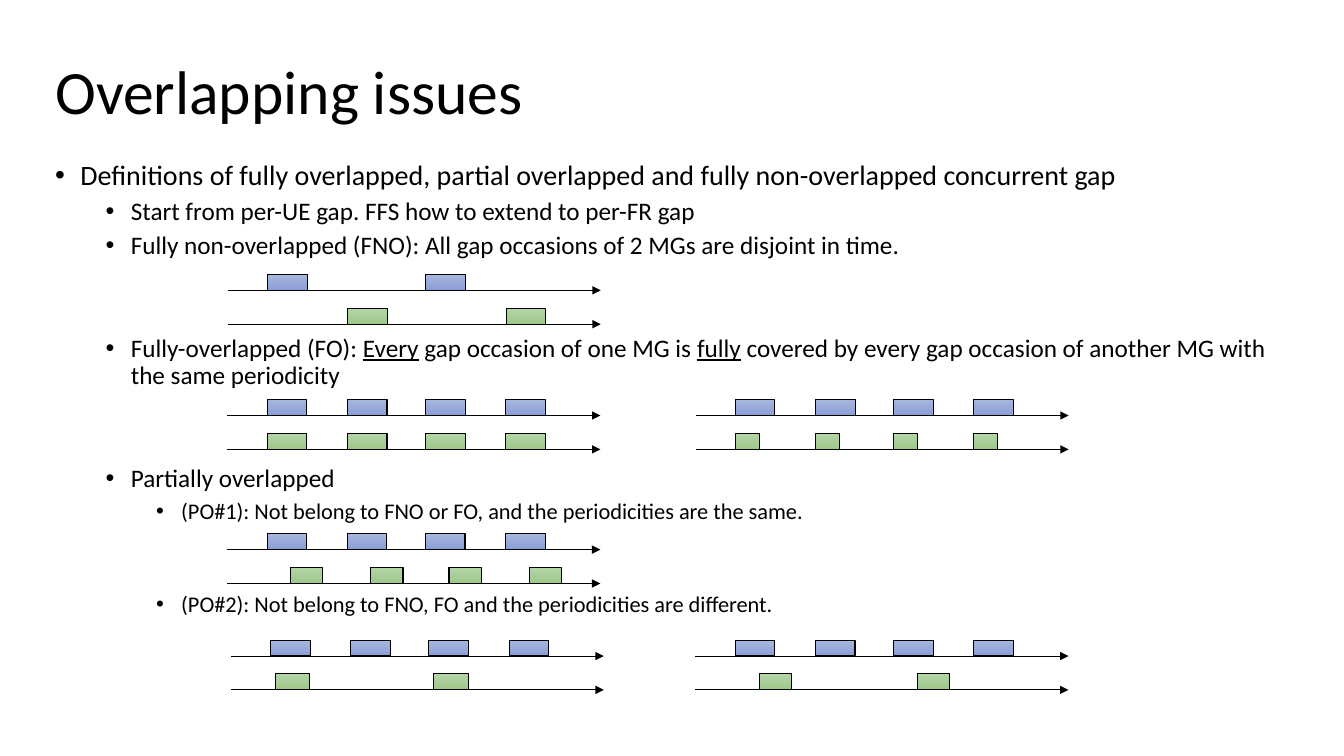
from copy import deepcopy
from dataclasses import dataclass

from lxml.etree import SubElement
from pptx import Presentation
from pptx.dml.color import RGBColor
from pptx.enum.shapes import MSO_CONNECTOR, MSO_SHAPE
from pptx.enum.text import MSO_ANCHOR
from pptx.oxml.ns import qn
from pptx.shapes.group import GroupShape
from pptx.slide import Slide
from pptx.text.text import TextFrame
from pptx.util import Pt


@dataclass(frozen=True)
class Theme:
    font: str = "Calibri"
    ink: str = "000000"
    blue: tuple[str, ...] = ("A8B7DF", "9AABD9", "889ED7")
    green: tuple[str, ...] = ("B5D5A7", "AACE9A", "9CC987")
    title: float = 44
    sizes: tuple[float, ...] = (20, 18, 16)
    line: float = 0.75


@dataclass(frozen=True)
class Point:
    """A bullet; every second one of its texts is underlined."""
    level: int
    before: float
    texts: tuple[str, ...]


@dataclass(frozen=True)
class Gaps:
    """Gap boxes on one time axis: the slots they use, their shift and width."""
    slots: tuple[int, ...]
    shift: float
    width: float


THEME = Theme()
ALL = (0, 1, 2, 3)
BOX_W, BOX_H = 28.3, 11.4
AXIS_W, AXIS_GAP = 266.5, 24.2
SLOTS = (28.5, 85.8, 141.6, 198.9)
FULL = Gaps(ALL, 0, BOX_W)


@dataclass(frozen=True)
class Chart:
    """A blue axis at (left, top) with a green axis below it."""
    left: float
    top: float
    green: Gaps
    blue: Gaps = FULL


POINTS = (
    Point(0, 10, ("Definitions of fully overlapped, partial overlapped and "
                  "fully non-overlapped concurrent gap",)),
    Point(1, 5, ("Start from per-UE gap. FFS how to extend to per-FR gap",)),
    Point(1, 5, ("Fully non-overlapped (FNO): All gap occasions of 2 MGs "
                 "are disjoint in time.",)),
    Point(1, 54, ("Fully-overlapped (FO): ", "Every",
                  " gap occasion of one MG is ", "fully",
                  " covered by every gap occasion of another MG with "
                  "the same periodicity")),
    Point(1, 54, ("Partially overlapped",)),
    Point(2, 5, ("(PO#1): Not belong to FNO or FO, and the periodicities "
                 "are the same.",)),
    Point(2, 49.5, ("(PO#2): Not belong to FNO, FO and the periodicities "
                    "are different.",)),
)

CHARTS = (
    Chart(162.6, 207.4, Gaps((1, 3), 0, BOX_W), Gaps((0, 2), 0, BOX_W)),
    Chart(496.8, 296.8, Gaps(ALL, 0, 17)),
    Chart(162.4, 296.8, FULL),
    Chart(162.3, 392.6, Gaps(ALL, 16.8, 23)),
    Chart(164.8, 468.6, Gaps((0, 2), 3.6, 24.5)),
    Chart(496.7, 468.6, Gaps((0, 2), 17.4, 22.5)),
)


def add_frame(slide: Slide, left: float, top: float,
              width: float, height: float) -> TextFrame:
    box = slide.shapes.add_textbox(Pt(left), Pt(top), Pt(width), Pt(height))
    box.text_frame.word_wrap = True
    return box.text_frame


def add_run(para, text: str, size: float, under: bool = False) -> None:
    run = para.add_run()
    run.text = text
    run.font.color.rgb = RGBColor.from_string(THEME.ink)
    style = {"name": THEME.font, "size": Pt(size)}
    if under:
        style["underline"] = True
    for key, value in style.items():
        setattr(run.font, key, value)


def add_title(slide: Slide, text: str) -> None:
    frame = add_frame(slide, 32.4, 28.8, 895.7, 77)
    frame.vertical_anchor = MSO_ANCHOR.MIDDLE
    para = frame.paragraphs[0]
    para.line_spacing = 0.9
    add_run(para, text, THEME.title)


def add_points(slide: Slide, points: tuple[Point, ...]) -> None:
    frame = add_frame(slide, 32.4, 111.6, 895.7, 414)
    for index, point in enumerate(points):
        para = frame.add_paragraph() if index else frame.paragraphs[0]
        style = {"level": point.level, "line_spacing": 0.9,
                 "space_before": Pt(point.before)}
        for key, value in style.items():
            setattr(para, key, value)
        props = para._p.get_or_add_pPr()
        props.set("marL", str(Pt(18 + 36 * point.level)))
        props.set("indent", str(Pt(-18)))
        SubElement(props, qn("a:buFont")).set("typeface", "Arial")
        SubElement(props, qn("a:buChar")).set("char", "•")
        for turn, text in enumerate(point.texts):
            add_run(para, text, THEME.sizes[point.level], turn % 2 == 1)


def add_axis(group: GroupShape, left: float, top: float) -> None:
    axis = group.shapes.add_connector(
        MSO_CONNECTOR.STRAIGHT, Pt(left), Pt(top), Pt(left + AXIS_W), Pt(top))
    axis.line.color.rgb = RGBColor.from_string(THEME.ink)
    axis.line.width = Pt(THEME.line)
    props = axis._element.spPr
    SubElement(props.find(qn("a:ln")), qn("a:tailEnd")).set("type", "triangle")
    SubElement(props, qn("a:effectLst"))


def add_box(group: GroupShape, left: float, top: float, width: float,
            shades: tuple[str, ...]) -> None:
    box = group.shapes.add_shape(
        MSO_SHAPE.RECTANGLE, Pt(left), Pt(top), Pt(width), Pt(BOX_H))
    box.shadow.inherit = False
    box.line.color.rgb = RGBColor.from_string(THEME.ink)
    box.line.width = Pt(THEME.line)
    box.fill.gradient()
    box.fill.gradient_angle = 270
    stops = box._element.spPr.find(".//" + qn("a:gsLst"))
    middle = deepcopy(stops[0])
    middle.set("pos", "50000")
    stops.insert(1, middle)
    for stop, shade in zip(box.fill.gradient_stops, shades):
        stop.color.rgb = RGBColor.from_string(shade)


def add_chart(slide: Slide, chart: Chart) -> None:
    group = slide.shapes.add_group_shape()
    rows = ((chart.green, chart.top + AXIS_GAP, THEME.green),
            (chart.blue, chart.top, THEME.blue))
    for gaps, top, shades in rows:
        add_axis(group, chart.left, top)
        for slot in gaps.slots:
            left = chart.left + SLOTS[slot] + gaps.shift
            add_box(group, left, top - BOX_H, gaps.width, shades)


def main() -> None:
    deck = Presentation()
    deck.slide_width, deck.slide_height = Pt(960), Pt(540)
    slide = deck.slides.add_slide(deck.slide_layouts[6])
    add_title(slide, "Overlapping issues")
    add_points(slide, POINTS)
    for chart in CHARTS:
        add_chart(slide, chart)
    deck.save("out.pptx")


if __name__ == "__main__":
    main()
